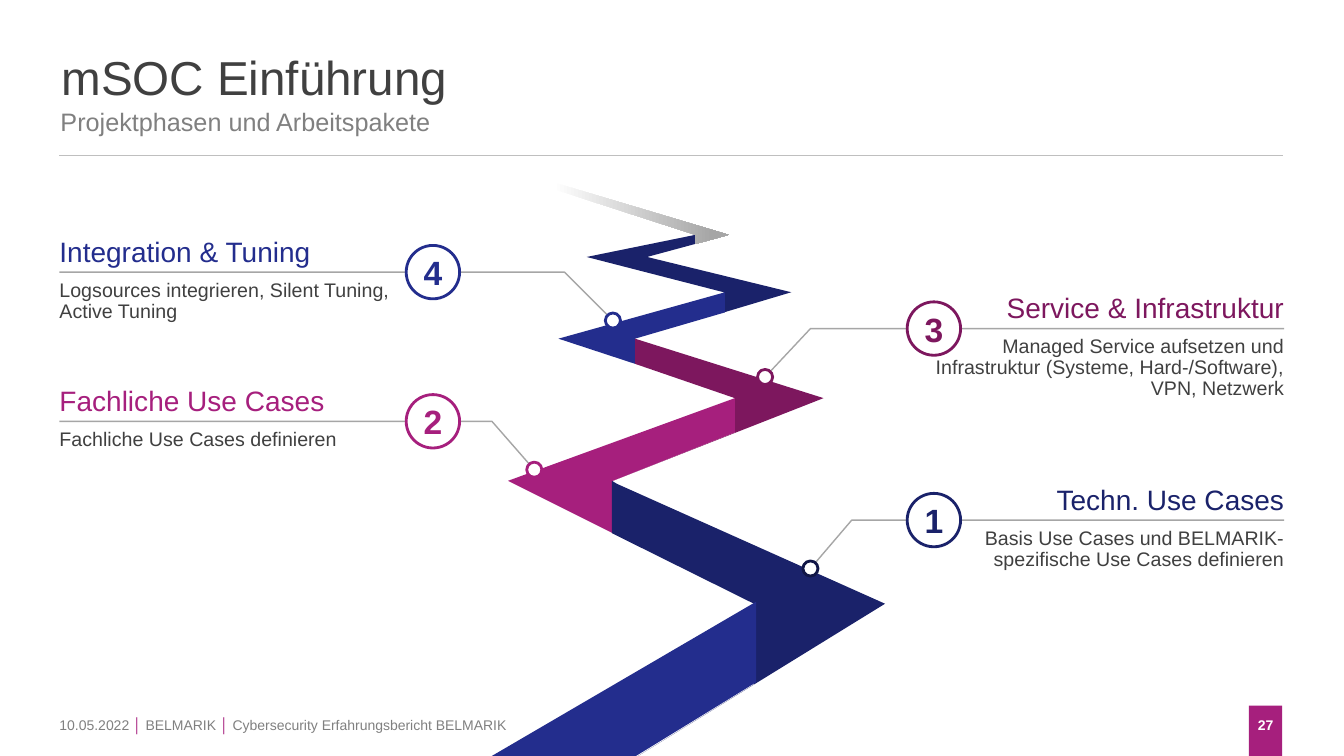
from lxml import etree
from pptx import Presentation
from pptx.dml.color import RGBColor
from pptx.enum.shapes import MSO_CONNECTOR, MSO_SHAPE
from pptx.enum.text import MSO_ANCHOR, MSO_AUTO_SIZE, PP_ALIGN
from pptx.oxml.ns import qn
from pptx.util import Inches, Pt

LEFT, CENTER, RIGHT = PP_ALIGN.LEFT, PP_ALIGN.CENTER, PP_ALIGN.RIGHT
TOP, MIDDLE, BOTTOM = MSO_ANCHOR.TOP, MSO_ANCHOR.MIDDLE, MSO_ANCHOR.BOTTOM
ELLIPSE, RECTANGLE = MSO_SHAPE.OVAL, MSO_SHAPE.RECTANGLE
STRAIGHT = MSO_CONNECTOR.STRAIGHT
NO_AUTOFIT = MSO_AUTO_SIZE.NONE

COLUMNS, ROWS = 133.33, 75
CELL = Inches(0.1)
MARGIN_LEFT, MARGIN_RIGHT = 5.9, 127.4
BADGE, DOT = 5.3, 1.5

NAVY, BLUE, PLUM, MAGENTA = "1A226A", "232D8D", "7D175E", "A61F7D"
DARK, GRAY, SILVER, PALE, WHITE = "404040", "808080", "A6A6A6", "BFBFBF", "FFFFFF"

ROAD = [
    (NAVY, [(71.8, 31), (78.5, 29), (64.2, 25.5), (69, 24.2), (69, 23.3),
            (58.2, 25.5), (71.8, 29)]),
    (BLUE, [(71.9, 31), (71.9, 29), (55.4, 33.6), (63, 36.1), (63, 33.6)]),
    (PLUM, [(60.8, 47.7), (81.7, 39.5), (63, 33.6), (63, 36.1), (72.9, 39.5),
            (72.9, 42.9)]),
    (None, [(69, 24.2), (72.3, 23.3), (46.9, 15.7), (45.5, 15.7), (69, 23.3)]),
    (MAGENTA, [(72.9, 42.9), (72.9, 39.5), (50.4, 47.7), (60.8, 52.9),
               (60.8, 47.7)]),
    (NAVY, [(60.7, 47.7), (60.7, 52.9), (74.8, 59.9), (74.8, 67.9), (63.3, 75),
            (87.8, 59.9), (61.2, 48)]),
    (BLUE, [(75, 59.7), (48.8, 75), (63.1, 75), (75, 67.7)]),
]


def color(value):
    """Return the colour of a hex string."""
    return RGBColor.from_string(value)


def cells(*counts):
    """Convert grid counts to slide lengths."""
    return [round(count * CELL) for count in counts]


def write(shape, runs, size, align=LEFT, anchor=TOP, insets=(0, 0, 0, 0),
          bold=False, line_spacing=None):
    """Fill a shape with one paragraph of (text, colour) runs."""
    frame = shape.text_frame
    frame.word_wrap = True
    frame.auto_size = NO_AUTOFIT
    frame.vertical_anchor = anchor
    (frame.margin_left, frame.margin_top,
     frame.margin_right, frame.margin_bottom) = cells(*insets)
    paragraph = frame.paragraphs[0]
    paragraph.alignment = align
    if line_spacing:
        paragraph.line_spacing = line_spacing
    for text, tone in runs:
        for index, line in enumerate(text.split("\n")):
            if index:
                paragraph.add_line_break()
            run = paragraph.add_run()
            run.text = line
            run.font.name = "Arial"
            run.font.size = Pt(size)
            run.font.bold = bold
            run.font.color.rgb = color(tone)


def add_text(shapes, box, runs, size, **style):
    """Add a text box."""
    write(shapes.add_textbox(*cells(*box)), runs, size, **style)


def add_preset(shapes, kind, box, fill, outline=None):
    """Add a flat preset shape, outlined if a colour is given."""
    shape = shapes.add_shape(kind, *cells(*box))
    shape.shadow.inherit = False
    shape.fill.solid()
    shape.fill.fore_color.rgb = color(fill)
    if outline:
        shape.line.color.rgb = color(outline)
        shape.line.width = Pt(2)
    else:
        shape.line.fill.background()
    return shape


def add_outline(shapes, points, close):
    """Add a freeform through grid points."""
    start, *others = [cells(*point) for point in points]
    builder = shapes.build_freeform(*start)
    builder.add_line_segments(others, close=close)
    shape = builder.convert_to_shape()
    shape.shadow.inherit = False
    return shape


def add_road(slide):
    """Add the zigzag road, fading out at its far end."""
    shapes = slide.shapes.add_group_shape().shapes
    for tone, points in ROAD:
        segment = add_outline(shapes, points, True)
        segment.line.fill.background()
        if tone:
            segment.fill.solid()
            segment.fill.fore_color.rgb = color(tone)
        else:
            segment.fill.gradient()
            segment.fill.gradient_angle = 0
            stops = segment.fill.gradient_stops
            for stop, position, shade in zip(stops, (0.35, 0.94), (WHITE, SILVER)):
                stop.position = position
                stop.color.rgb = color(shade)


def add_phase(slide, number, heading, body, accent, level, turn, target, width,
              dot_tone=None):
    """Add a numbered phase whose leader line ends on the road."""
    shapes = slide.shapes.add_group_shape().shapes
    on_left = turn < COLUMNS / 2
    edge = MARGIN_LEFT if on_left else MARGIN_RIGHT
    left = edge if on_left else edge - width
    align = LEFT if on_left else RIGHT
    end = level + 4.8

    leader = add_outline(shapes, [(target, end), (turn, level), (edge, level)], False)
    leader.fill.background()
    leader.line.color.rgb = color(SILVER)
    leader.line.width = Pt(1)
    etree.SubElement(leader.line._get_or_add_ln(), qn("a:headEnd"), type="oval")

    add_text(shapes, (left, level - 3.8, width, 3.8), [(heading, accent)], 20,
             align=align, anchor=BOTTOM, insets=(0, 0, 0, 0.4), line_spacing=0.9)
    add_text(shapes, (left, level, width, 7.3), [(body, DARK)], 14,
             align=align, insets=(0, 0.8, 0, 0), line_spacing=0.9)
    add_preset(shapes, ELLIPSE, (target - DOT / 2, end - DOT / 2, DOT, DOT),
               WHITE, dot_tone or accent)
    badge = add_preset(shapes, ELLIPSE,
                       (40.3 if on_left else 90, level - BADGE / 2, BADGE, BADGE),
                       WHITE, accent)
    write(badge, [(number, accent)], 24, align=CENTER, anchor=MIDDLE,
          insets=(0.4, 0.4, 0.4, 0.4), bold=True)


def add_header(slide):
    """Format the title and add the subtitle and the rule below."""
    title = slide.shapes.title
    title.left, title.top, title.width, title.height = cells(6.1, 4.8, 94.3, 5.7)
    write(title, [("mSOC Einführung", DARK)], 34)
    add_text(slide.shapes, (6, 10.5, 121.2, 3),
             [("Projektphasen und Arbeitspakete", GRAY)], 18)
    rule = slide.shapes.add_connector(
        STRAIGHT, *cells(MARGIN_LEFT, 15.4, 127.3, 15.4))
    rule.line.color.rgb = color(PALE)
    rule.line.width = Pt(0.75)
    etree.SubElement(rule._element.spPr, qn("a:effectLst"))


def add_footer(slide):
    """Add the date, the footer text and the page number."""
    add_text(slide.shapes, (MARGIN_LEFT, 70.8, 7.4, 2.3), [("10.05.2022", GRAY)], 10,
             anchor=MIDDLE)
    add_text(slide.shapes, (13.2, 70.8, 92.4, 2.3),
             [("│ ", MAGENTA), ("BELMARIK ", GRAY), ("│ ", MAGENTA),
              ("Cybersecurity Erfahrungsbericht BELMARIK", GRAY)], 10, anchor=MIDDLE)
    page = add_preset(slide.shapes, RECTANGLE, (123.9, 70, 3.3, 5), MAGENTA)
    write(page, [("27", WHITE)], 10, align=CENTER, insets=(0, 1.1, 0, 0), bold=True)


def main():
    """Build the slide and save it."""
    presentation = Presentation()
    presentation.slide_width, presentation.slide_height = cells(COLUMNS, ROWS)
    slide = presentation.slides.add_slide(presentation.slide_layouts[5])
    add_header(slide)
    add_footer(slide)
    add_road(slide)
    add_phase(slide, "4", "Integration & Tuning",
              "Logsources integrieren, Silent Tuning,\nActive Tuning",
              BLUE, 27, 56, 60.8, 39)
    add_phase(slide, "2", "Fachliche Use Cases", "Fachliche Use Cases definieren",
              MAGENTA, 41.8, 48.8, 53, 31.2)
    add_phase(slide, "3", "Service & Infrastruktur",
              "Managed Service aufsetzen und Infrastruktur "
              "(Systeme, Hard-/Software), VPN, Netzwerk",
              PLUM, 32.6, 80.4, 75.9, 35.6)
    add_phase(slide, "1", "Techn. Use Cases",
              "Basis Use Cases und BELMARIK-spezifische Use Cases definieren",
              NAVY, 51.6, 84.5, 80.4, 31.2, "111646")
    presentation.save("out.pptx")


if __name__ == "__main__":
    main()
